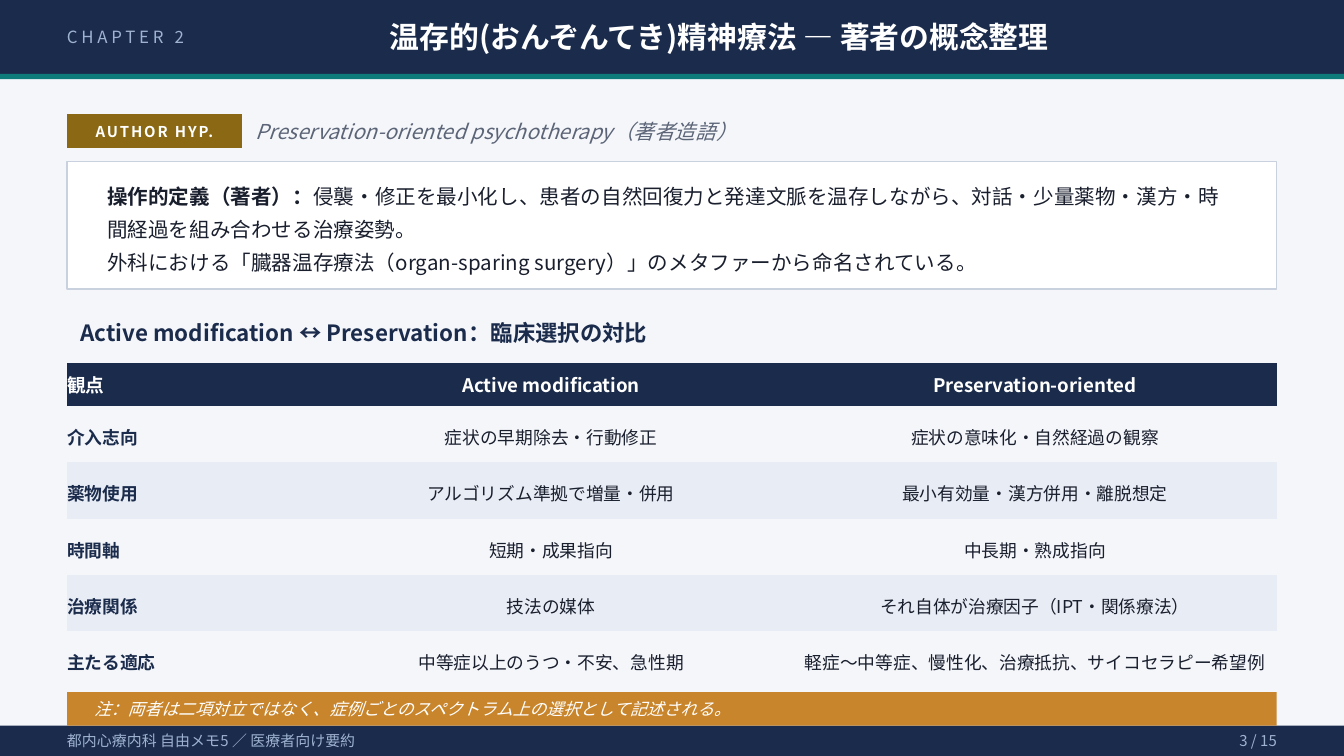
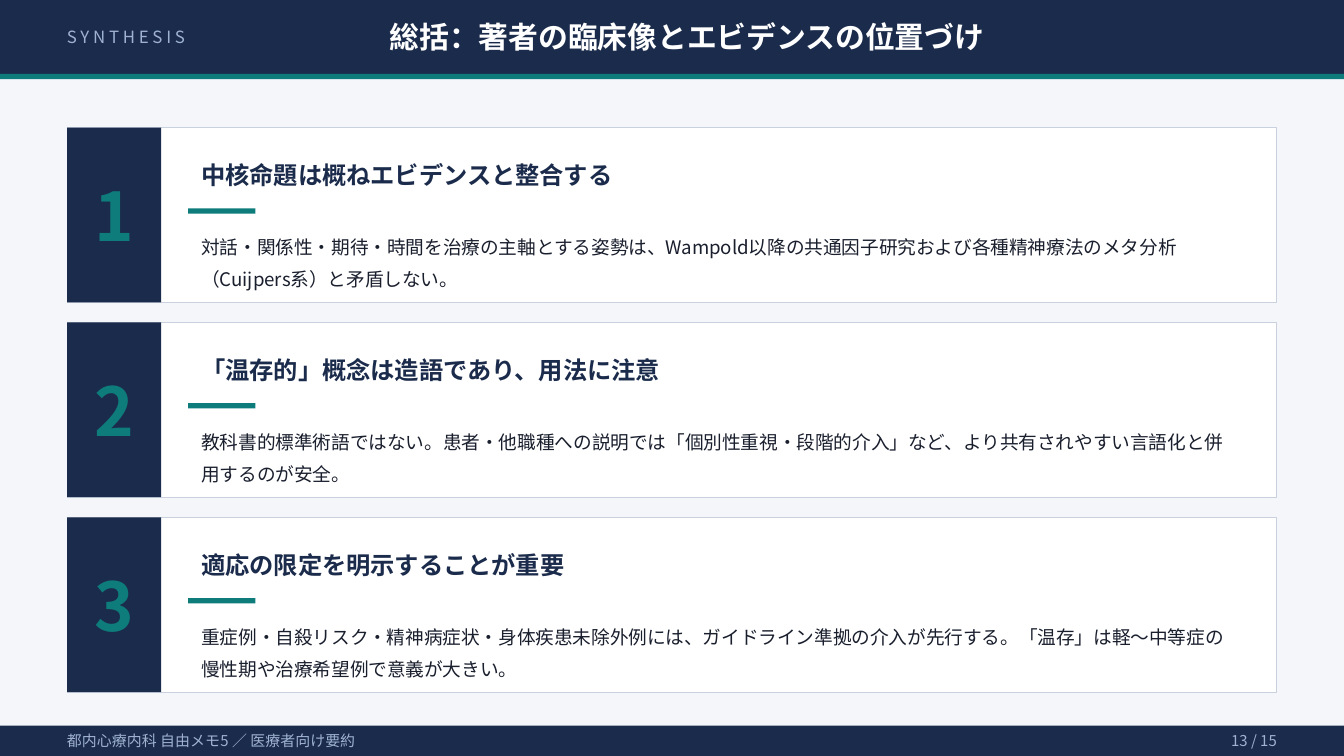
"""Builds two summary slides on preservation-oriented psychotherapy."""
from lxml import etree
from pptx import Presentation
from pptx.dml.color import RGBColor
from pptx.enum import shapes, text
from pptx.oxml.ns import qn
from pptx.util import Inches, Pt

FONT = "Noto Sans CJK JP"
NAVY, TEAL, INK, WHITE = "1B2B4B", "0E7C7B", "1A1F2E", "FFFFFF"
PAGE, STRIPE, BORDER, MUTED = "F4F6FA", "E8EDF5", "C9D1DE", "9FB3D1"
GOLD, AMBER, GREY = "8B6914", "C8852C", "5C6577"
SLIDE_WIDTH = 10
SLIDE_HEIGHT = SLIDE_WIDTH * 9 / 16
LEFT, WIDTH = 0.5, 9
ALIGN = {"l": text.PP_ALIGN.LEFT, "c": text.PP_ALIGN.CENTER, "r": text.PP_ALIGN.RIGHT}

FOOTER = "都内心療内科 自由メモ5 ／ 医療者向け要約"
CONCEPT = {
    "chapter": "CHAPTER 2",
    "title": "温存的(おんぞんてき)精神療法 ― 著者の概念整理",
    "page": "3 / 15",
    "badge": "AUTHOR HYP.",
    "term": "Preservation-oriented psychotherapy（著者造語）",
    "definition": [
        [("操作的定義（著者）：", True),
         ("侵襲・修正を最小化し、患者の自然回復力と発達文脈を温存しながら、"
          "対話・少量薬物・漢方・時間経過を組み合わせる治療姿勢。", False)],
        [("外科における「臓器温存療法（organ-sparing surgery）」のメタファーから命名されている。", False)],
    ],
    "heading": "Active modification ↔ Preservation：臨床選択の対比",
    "contrast": [
        ("観点", "Active modification", "Preservation-oriented"),
        ("介入志向", "症状の早期除去・行動修正", "症状の意味化・自然経過の観察"),
        ("薬物使用", "アルゴリズム準拠で増量・併用", "最小有効量・漢方併用・離脱想定"),
        ("時間軸", "短期・成果指向", "中長期・熟成指向"),
        ("治療関係", "技法の媒体", "それ自体が治療因子（IPT・関係療法）"),
        ("主たる適応", "中等症以上のうつ・不安、急性期", "軽症〜中等症、慢性化、治療抵抗、サイコセラピー希望例"),
    ],
    "note": "注：両者は二項対立ではなく、症例ごとのスペクトラム上の選択として記述される。",
}
SYNTHESIS = {
    "chapter": "SYNTHESIS",
    "title": "総括：著者の臨床像とエビデンスの位置づけ",
    "page": "13 / 15",
    "points": [
        ("中核命題は概ねエビデンスと整合する",
         "対話・関係性・期待・時間を治療の主軸とする姿勢は、Wampold以降の共通因子研究および"
         "各種精神療法のメタ分析（Cuijpers系）と矛盾しない。"),
        ("「温存的」概念は造語であり、用法に注意",
         "教科書的標準術語ではない。患者・他職種への説明では「個別性重視・段階的介入」など、"
         "より共有されやすい言語化と併用するのが安全。"),
        ("適応の限定を明示することが重要",
         "重症例・自殺リスク・精神病症状・身体疾患未除外例には、ガイドライン準拠の介入が先行する。"
         "「温存」は軽〜中等症の慢性期や治療希望例で意義が大きい。"),
    ],
}


def rgb(value):
    return RGBColor.from_string(value)


def write(frame, content, size, color, bold=False, italic=False, align="l", leading=None, tracking=0):
    """Fill a text frame from a string or from paragraphs of (words, bold) runs."""
    paragraphs = [[(content, bold)]] if isinstance(content, str) else content
    for index, runs in enumerate(paragraphs):
        paragraph = frame.add_paragraph() if index else frame.paragraphs[0]
        paragraph.alignment = ALIGN[align]
        if leading:
            paragraph.line_spacing = leading
        for words, heavy in runs:
            run = paragraph.add_run()
            run.text = words
            font = run.font
            font.size, font.bold, font.italic = Pt(size), heavy, italic
            font.color.rgb = rgb(color)
            font.name = FONT
            props = run._r.get_or_add_rPr()
            props.find(qn("a:latin")).addnext(etree.Element(qn("a:ea"), typeface=FONT))
            if tracking:
                props.set("spc", str(tracking * 100))


def prepare(frame, side, edge):
    frame.word_wrap = True
    frame.vertical_anchor = text.MSO_ANCHOR.MIDDLE
    frame.margin_left = frame.margin_right = Inches(side)
    frame.margin_top = frame.margin_bottom = Inches(edge)


def label(slide, box, content, size, color, inset=True, **style):
    frame = slide.shapes.add_textbox(*map(Inches, box)).text_frame
    prepare(frame, 0.1 if inset else 0, 0.05 if inset else 0)
    write(frame, content, size, color, **style)


def panel(slide, box, fill, border=None):
    block = slide.shapes.add_shape(shapes.MSO_SHAPE.RECTANGLE, *map(Inches, box))
    block.shadow.inherit = False
    block.fill.solid()
    block.fill.fore_color.rgb = rgb(fill)
    if border:
        block.line.color.rgb = rgb(BORDER)
        block.line.width = Pt(border)
    else:
        block.line.fill.background()
    return block.text_frame


def captioned_panel(slide, box, fill, content, size, color, side=0.1, **style):
    frame = panel(slide, box, fill)
    prepare(frame, side, 0.05)
    write(frame, content, size, color, **style)


def add_page(deck, content):
    """Add a slide with the shared background, header and footer."""
    slide = deck.slides.add_slide(deck.slide_layouts[6])
    slide.background.fill.solid()
    slide.background.fill.fore_color.rgb = rgb(PAGE)
    panel(slide, (0, 0, SLIDE_WIDTH, 0.55), NAVY)
    panel(slide, (0, 0.55, SLIDE_WIDTH, 0.04), TEAL)
    label(slide, (0.4, 0.05, 2.5, 0.45), content["chapter"], 9, MUTED, tracking=2)
    label(slide, (2.9, 0.05, 6.9, 0.45), content["title"], 16, WHITE, inset=False, bold=True)
    foot_top = 5.4
    foot_height = SLIDE_HEIGHT - foot_top
    panel(slide, (0, foot_top, SLIDE_WIDTH, foot_height), NAVY)
    label(slide, (0.4, foot_top, 6, foot_height), FOOTER, 8, MUTED)
    label(slide, (8.8, foot_top, 0.8, foot_height), content["page"], 8, MUTED, align="r")
    return slide


def add_contrast(slide, rows, top):
    """Add the comparison table with a dark header and striped rows."""
    widths = (1.8, 3.6, 3.6)
    heights = [0.32] + [0.42] * (len(rows) - 1)
    table = slide.shapes.add_table(len(rows), len(widths), Inches(LEFT), Inches(top),
                                   Inches(WIDTH), Inches(sum(heights))).table
    table.horz_banding = False
    table._tbl.tblPr.find(qn("a:tableStyleId")).text = "{2D5ABB26-0587-4C30-8999-92F81FD0307C}"
    for column, width in zip(table.columns, widths):
        column.width = Inches(width)
    for r, row in enumerate(rows):
        table.rows[r].height = Inches(heights[r])
        for c, words in enumerate(row):
            cell = table.cell(r, c)
            cell.margin_left = cell.margin_right = cell.margin_top = cell.margin_bottom = 0
            cell.vertical_anchor = text.MSO_ANCHOR.MIDDLE
            cell.fill.solid()
            cell.fill.fore_color.rgb = rgb(NAVY if r == 0 else PAGE if r % 2 else STRIPE)
            align = "c" if c else "l"
            if r == 0:
                write(cell.text_frame, words, 10, WHITE, bold=True, align=align)
            else:
                write(cell.text_frame, words, 9.5, INK if c else NAVY,
                      bold=c == 0, align=align, leading=1.2)


def build_concept(deck):
    slide = add_page(deck, CONCEPT)
    captioned_panel(slide, (LEFT, 0.85, 1.3, 0.25), GOLD, CONCEPT["badge"], 8, WHITE,
                    bold=True, align="c", tracking=1)
    label(slide, (1.9, 0.85, 7, 0.25), CONCEPT["term"], 11, GREY, inset=False, italic=True)
    panel(slide, (LEFT, 1.2, WIDTH, 0.95), WHITE, border=0.75)
    label(slide, (0.7, 1.25, 8.6, 0.85), CONCEPT["definition"], 11, INK, leading=1.35)
    label(slide, (LEFT, 2.3, WIDTH, 0.35), CONCEPT["heading"], 12, NAVY, bold=True)
    add_contrast(slide, CONCEPT["contrast"], 2.7)
    captioned_panel(slide, (LEFT, 5.15, WIDTH, 0.25), AMBER, CONCEPT["note"], 9, WHITE,
                    side=0.2, italic=True)


def build_synthesis(deck):
    slide = add_page(deck, SYNTHESIS)
    height, gap, inner = 1.3, 0.15, 1.4
    for index, (claim, detail) in enumerate(SYNTHESIS["points"]):
        top = 0.95 + index * (height + gap)
        panel(slide, (LEFT, top, WIDTH, height), WHITE, border=0.5)
        captioned_panel(slide, (LEFT, top, 0.7, height), NAVY, str(index + 1), 36, TEAL,
                        bold=True, align="c")
        label(slide, (inner, top + 0.15, 7.9, 0.4), claim, 13, NAVY, bold=True)
        panel(slide, (inner, top + 0.6, 0.5, 0.04), TEAL)
        label(slide, (inner, top + 0.7, 7.9, 0.55), detail, 10, INK, leading=1.4)


def main():
    deck = Presentation()
    deck.slide_width, deck.slide_height = Inches(SLIDE_WIDTH), Inches(SLIDE_HEIGHT)
    build_concept(deck)
    build_synthesis(deck)
    deck.save("out.pptx")


if __name__ == "__main__":
    main()
